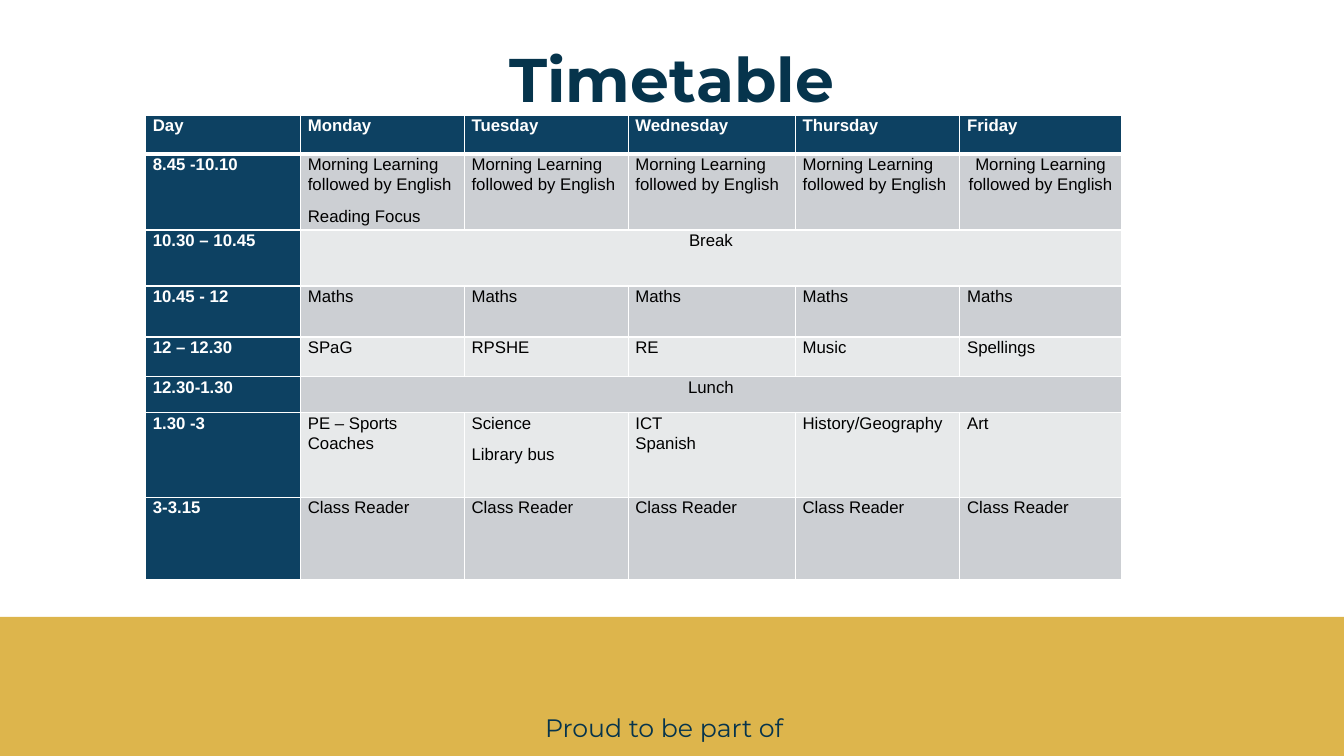
from copy import deepcopy
from dataclasses import dataclass

from lxml import etree
from pptx import Presentation
from pptx import util as u
from pptx.dml.color import RGBColor
from pptx.enum import shapes, text
from pptx.oxml.ns import qn

LEFT, CENTER = text.PP_ALIGN.LEFT, text.PP_ALIGN.CENTER


@dataclass(frozen=True)
class Theme:
    ink: str = "06344C"
    gold: str = "DDB54C"
    navy: str = "0D4162"
    dark_band: str = "CCCFD3"
    light_band: str = "E7E9EA"
    white: str = "FFFFFF"
    black: str = "000000"
    head_font: str = "Montserrat"
    body_font: str = "Arial"
    title: int = 44
    footer: int = 18
    body: int = 12


def write(tf, *paragraphs, font, size, color, bold=False, align=LEFT,
          spacing=None, after=None):
    """Fill a text frame; a newline inside a paragraph is a line break."""
    for i, words in enumerate(paragraphs):
        p = tf.add_paragraph() if i else tf.paragraphs[0]
        p.text = words
        p.alignment = align
        if spacing:
            p.line_spacing = spacing
        if after:
            p.space_after = u.Pt(after)
        for r in p.runs:
            r.font.name, r.font.size, r.font.bold = font, u.Pt(size), bold
            r.font.color.rgb = RGBColor.from_string(color)
        for br in p._p.findall(qn("a:br")):
            br.append(deepcopy(p.runs[0]._r.rPr))


class Deck:
    def __init__(self, theme):
        self.theme = theme
        self.prs = Presentation()
        self.prs.slide_width, self.prs.slide_height = u.Pt(960), u.Pt(540)
        self.s = self.prs.slides.add_slide(self.prs.slide_layouts[6])

    def band(self, x, y, w, h, color):
        sp = self.s.shapes.add_shape(shapes.MSO_SHAPE.RECTANGLE,
                                     u.Pt(x), u.Pt(y), u.Pt(w), u.Pt(h))
        sp.shadow.inherit = False
        sp.fill.solid()
        sp.fill.fore_color.rgb = RGBColor.from_string(color)
        sp.line.fill.background()

    def label(self, words, x, y, w, h, anchor=text.MSO_ANCHOR.TOP, bottom=3.6, **fmt):
        tf = self.s.shapes.add_textbox(u.Pt(x), u.Pt(y), u.Pt(w), u.Pt(h)).text_frame
        tf.word_wrap = True
        tf.vertical_anchor = anchor
        tf.margin_bottom = u.Pt(bottom)
        write(tf, words, font=self.theme.head_font, color=self.theme.ink, **fmt)

    def cell(self, cell, paragraphs, fill, header=False, align=LEFT, edges=None):
        t = self.theme
        cell.margin_left = cell.margin_right = u.Pt(5.2)
        cell.margin_top = cell.margin_bottom = 0
        write(cell.text_frame, *paragraphs, font=t.body_font, size=t.body,
              color=t.white if header else t.black, bold=header, align=align,
              spacing=1.07, after=8)
        # Borders come before the fill in the cell properties
        tcPr = cell._tc.get_or_add_tcPr()
        for side, width in edges.items():
            ln = etree.SubElement(tcPr, qn(f"a:ln{side}"), w=str(u.Pt(width)))
            solid = etree.SubElement(ln, qn("a:solidFill"))
            etree.SubElement(solid, qn("a:srgbClr"), val=t.white)
        cell.fill.solid()
        cell.fill.fore_color.rgb = RGBColor.from_string(fill)

    def timetable(self, x, y, widths, heights, rows):
        t = self.theme
        table = self.s.shapes.add_table(
            len(rows), len(widths), u.Pt(x), u.Pt(y),
            u.Pt(sum(widths)), u.Pt(sum(heights))).table
        table.first_row = table.horz_banding = False
        for col, w in zip(table.columns, widths):
            col.width = u.Pt(w)
        for row, h in zip(table.rows, heights):
            row.height = u.Pt(h)
        for i, (time, *lessons) in enumerate(rows):
            shared = len(lessons) == 1
            if shared:
                table.cell(i, 1).merge(table.cell(i, len(widths) - 1))
            band = t.dark_band if i % 2 else t.light_band
            edges = {"L": 1, "R": 1, "T": 3 if i == 1 else 1, "B": 1 if i else 3}
            for j, entry in enumerate([time, *lessons]):
                header = i == 0 or j == 0
                centred = not header and (shared or (i, j) == (1, 5))
                self.cell(table.cell(i, j),
                          entry if isinstance(entry, tuple) else (entry,),
                          t.navy if header else band, header,
                          CENTER if centred else LEFT, edges)


MORNING = "Morning Learning followed by English"
ROWS = [
    ["Day", "Monday", "Tuesday", "Wednesday", "Thursday", "Friday"],
    ["8.45 -10.10", (MORNING, "Reading Focus")] + [MORNING] * 4,
    ["10.30 – 10.45", "Break"],
    ["10.45 - 12"] + ["Maths"] * 5,
    ["12 – 12.30", "SPaG", "RPSHE", "RE", "Music", "Spellings"],
    ["12.30-1.30", "Lunch"],
    ["1.30 -3", "PE – Sports Coaches", ("Science", "Library bus"),
     "ICT\nSpanish", "History/Geography", "Art"],
    ["3-3.15"] + ["Class Reader"] * 5,
]


def main():
    theme = Theme()
    deck = Deck(theme)

    # Footer
    deck.band(0, 440.6, 960, 99.4, theme.gold)
    deck.label("Proud to be part of", 382.3, 505.4, 197.3, 29, size=theme.footer)

    # Title
    deck.label("Timetable", 120, 0, 720, 82, anchor=text.MSO_ANCHOR.BOTTOM,
               bottom=0, size=theme.title, bold=True, align=CENTER)

    # Weekly timetable
    deck.timetable(104, 82.2,
                   widths=[110.7, 117, 117, 119.5, 117.5, 115.3],
                   heights=[27.9, 52.2, 40, 36.4, 28.2, 26, 60.4, 59],
                   rows=ROWS)

    deck.prs.save("out.pptx")


if __name__ == "__main__":
    main()
